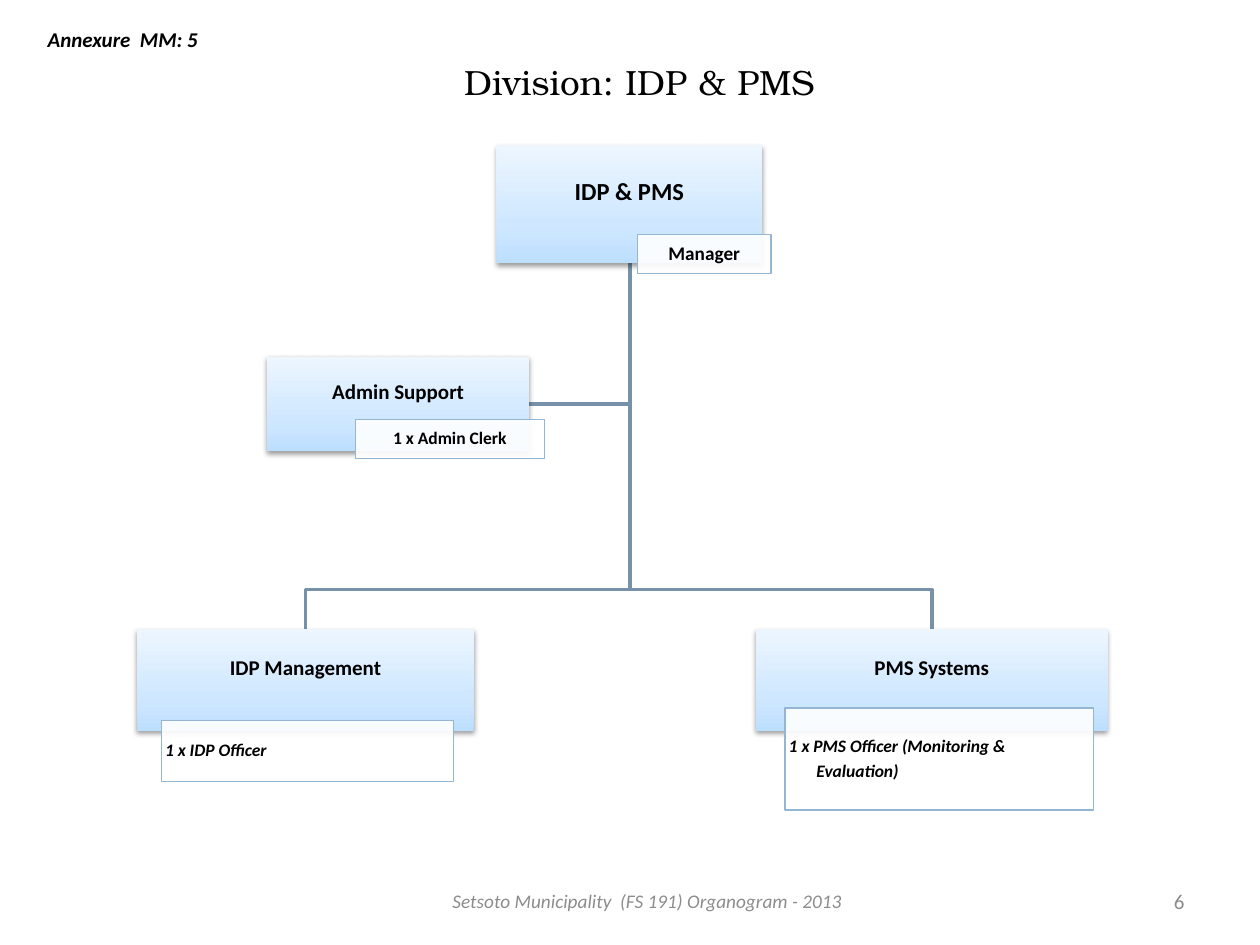
from pptx import Presentation
from pptx.dml.color import RGBColor
from pptx.enum.shapes import MSO_SHAPE
from pptx.enum.text import MSO_ANCHOR as Anchor, PP_ALIGN as Align
from pptx.oxml.ns import qn
from pptx.util import Inches, Pt
from copy import deepcopy
from lxml.etree import SubElement

COLORS = {
    "text": "000000", "muted": "8C8C8C", "line": "7792A8",
    "role_fill": "FFFFFF", "role_line": "94B6D2",
    "unit_low": "BDDFFF", "unit_mid": "D0E8FF", "unit_high": "EDF6FF",
}
UNIT_INSETS = (0.01, 0.01, 0.01, 0.19)
ROLE_INSETS = (0.03, 0.01, 0.03, 0.01)
HANGING_INDENT = Inches(0.22)

# Each unit: name, name size, box, role lines, role size, role box, listed at left
MANAGER = ("IDP & PMS", 14, (3.94, 1.15, 2.11, 0.94),
           ["Manager"], 11, (5.06, 1.86, 1.06, 0.31), False)
IDP = ("IDP Management", 12, (1.09, 4.99, 2.67, 0.81),
       ["1 x IDP Officer"], 10, (1.28, 5.72, 2.32, 0.48), True)
PMS = ("PMS Systems", 12, (6, 4.99, 2.79, 0.81),
       ["1 x PMS Officer (Monitoring &", "Evaluation)"], 10,
       (6.23, 5.62, 2.45, 0.81), True)
ADMIN = ("Admin Support", 12, (2.12, 2.83, 2.08, 0.75),
         ["1 x Admin Clerk"], 10, (2.82, 3.33, 1.5, 0.31), False)


def color(name):
    return RGBColor.from_string(COLORS[name])


def set_font(para, size, bold=False, italic=False, name="Calibri", ink="text"):
    font = para.font
    font.name, font.size = name, Pt(size)
    font.bold, font.italic = bold, italic
    font.color.rgb = color(ink)


def add_label(page, box, text, size, align, anchor=Anchor.MIDDLE, **style):
    label = page.shapes.add_textbox(*map(Inches, box))
    frame = label.text_frame
    frame.word_wrap = True
    frame.vertical_anchor = anchor
    para = frame.paragraphs[0]
    para.text, para.alignment = text, align
    set_font(para, size, **style)


def add_box(page, box, lines, size, insets, align, italic=False):
    shape = page.shapes.add_shape(MSO_SHAPE.RECTANGLE, *map(Inches, box))
    shape.shadow.inherit = False
    frame = shape.text_frame
    frame.word_wrap = True
    frame.vertical_anchor = Anchor.MIDDLE
    (frame.margin_left, frame.margin_top,
     frame.margin_right, frame.margin_bottom) = map(Inches, insets)
    for index, line in enumerate(lines):
        para = frame.add_paragraph() if index else frame.paragraphs[0]
        para.text, para.alignment = line, align
        para.line_spacing = 0.9
        para.space_after = Pt(0.35 * size)
        if index:
            para._p.get_or_add_pPr().set("marL", str(HANGING_INDENT))
        set_font(para, size, bold=True, italic=italic)
    return shape


def fill_unit(shape):
    """Vertical three-stop gradient with a soft shadow below."""
    fill = shape.fill
    fill.gradient()
    fill.gradient_angle = 90
    properties = shape._element.spPr
    stop_list = properties.find(qn("a:gradFill")).find(qn("a:gsLst"))
    stop_list.append(deepcopy(stop_list[0]))
    stops = zip(fill.gradient_stops, (0, 0.35, 1),
                ("unit_low", "unit_mid", "unit_high"))
    for stop, position, name in stops:
        stop.position = position
        stop.color.rgb = color(name)
    shape.line.fill.background()
    shadow = SubElement(properties.find(qn("a:effectLst")), qn("a:outerShdw"),
                        blurRad=str(Pt(3.1)), dist=str(Pt(1.6)),
                        dir="5400000", rotWithShape="0")
    tint = SubElement(shadow, qn("a:srgbClr"), val="000000")
    SubElement(tint, qn("a:alpha"), val="38000")


def fill_role(shape):
    """Nearly opaque white with a thin outline."""
    shape.fill.solid()
    shape.fill.fore_color.rgb = color("role_fill")
    tint = shape._element.spPr.find(qn("a:solidFill"))[0]
    SubElement(tint, qn("a:alpha"), val="90000")
    shape.line.color.rgb = color("role_line")
    shape.line.width = Pt(0.75)


def add_unit(page, unit):
    name, size, box, roles, role_size, role_box, listed = unit
    fill_unit(add_box(page, box, [name], size, UNIT_INSETS, Align.CENTER))
    align = Align.LEFT if listed else Align.CENTER
    fill_role(add_box(page, role_box, roles, role_size, ROLE_INSETS, align, listed))


def add_branch(page, points):
    corners = [(Inches(x), Inches(y)) for x, y in points]
    builder = page.shapes.build_freeform(*corners[0])
    builder.add_line_segments(corners[1:], close=False)
    branch = builder.convert_to_shape()
    branch.shadow.inherit = False
    branch.fill.background()
    branch.line.color.rgb = color("line")
    branch.line.width = Pt(2)


def add_chart_tree(page):
    left, top, width, height = MANAGER[2]
    trunk, start, bus = round(left + width / 2, 2), top + height, 4.68
    # Side branch to the support unit
    left, top, width, height = ADMIN[2]
    middle = top + height / 2
    add_branch(page, [(trunk, start), (trunk, middle), (left + width, middle)])
    # Branches down to the two sections
    for unit in (PMS, IDP):
        left, top, width, height = unit[2]
        center = left + width / 2
        add_branch(page, [(trunk, start), (trunk, bus), (center, bus), (center, top)])
    for unit in (MANAGER, IDP, PMS, ADMIN):
        add_unit(page, unit)


def add_title(page, box):
    title = page.shapes.title
    title.left, title.top, title.width, title.height = map(Inches, box)
    title.text_frame.vertical_anchor = Anchor.MIDDLE
    para = title.text_frame.paragraphs[0]
    para.text, para.alignment = "Division: IDP & PMS", Align.CENTER
    set_font(para, 20, name="TeX Gyre Bonum")


def main():
    deck = Presentation()
    deck.slide_width, deck.slide_height = Inches(10), Inches(7.5)
    page = deck.slides.add_slide(deck.slide_layouts[5])
    add_title(page, (0.5, 0.3, 9.15, 0.69))
    add_chart_tree(page)
    # Annexure mark, page number and footer
    add_label(page, (0.28, 0.16, 1.97, 0.3), "Annexure  MM: 5", 12, Align.LEFT,
              Anchor.TOP, bold=True, italic=True)
    add_label(page, (7.17, 6.95, 2.33, 0.4), "6", 12, Align.RIGHT, ink="muted")
    add_label(page, (3.42, 6.95, 3.47, 0.4),
              "Setsoto Municipality  (FS 191) Organogram - 2013 ", 11,
              Align.CENTER, italic=True, ink="muted")
    deck.save("out.pptx")


if __name__ == "__main__":
    main()
